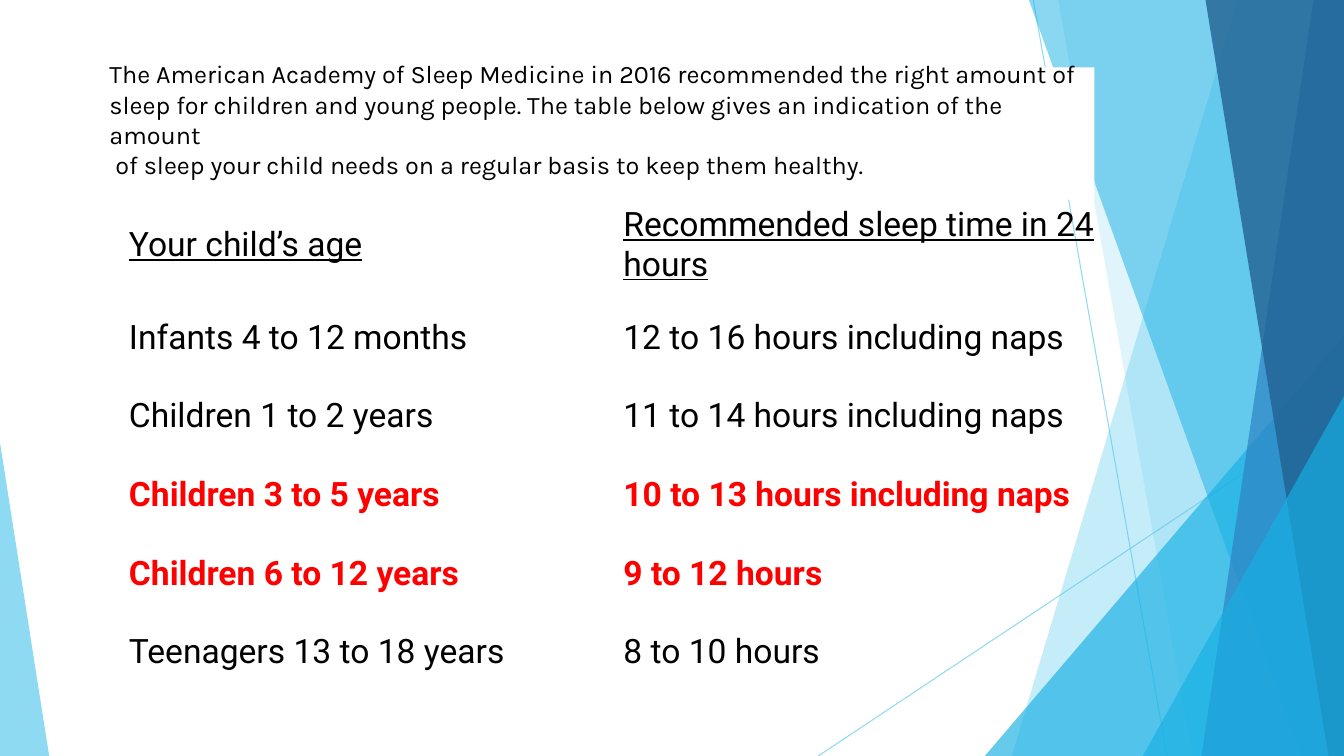
from dataclasses import dataclass

from lxml import etree
from pptx import Presentation
from pptx.dml.color import RGBColor
from pptx.enum.shapes import MSO_CONNECTOR, MSO_SHAPE
from pptx.enum.text import MSO_ANCHOR, MSO_AUTO_SIZE, PP_ALIGN
from pptx.oxml.ns import qn
from pptx.util import Cm, Pt

STRAIGHT = MSO_CONNECTOR.STRAIGHT
TRIANGLE = MSO_SHAPE.ISOSCELES_TRIANGLE
RECTANGLE = MSO_SHAPE.RECTANGLE
MIDDLE = MSO_ANCHOR.MIDDLE
LEFT = PP_ALIGN.LEFT
FIXED = MSO_AUTO_SIZE.NONE
BLANK_LAYOUT = 6
PLAIN_TABLE_STYLE = "{2D5ABB26-0587-4C30-8999-92F81FD0307C}"


@dataclass(frozen=True)
class Theme:
    sky: str = "5FCBEF"
    cyan: str = "17B0E4"
    blue: str = "2E83C3"
    navy: str = "226292"
    paper: str = "FFFFFF"
    ink: str = "000000"
    alert: str = "FF0000"
    intro_font: str = "Karla"
    table_font: str = "Roboto"
    intro_size: int = 18
    table_size: int = 24
    hairline: float = 0.75


@dataclass(frozen=True)
class Box:
    left: float
    top: float
    width: float
    height: float


THEME = Theme()
SLIDE = Box(0, 0, 33.87, 19.05)
INTRO = Box(2.51, 1.7, 25.07, 3.33)
SLEEP_TABLE = Box(3, 4.83, 24.92, 12.6)
HEADER_HEIGHT = 2.69

INTRO_LINES = [
    "The American Academy of Sleep Medicine in 2016 recommended the right amount of",
    "sleep for children and young people. The table below gives an indication of the amount",
    " of sleep your child needs on a regular basis to keep them healthy.",
]
SLEEP_ROWS = [
    ("Your child’s age", "Recommended sleep time in 24 hours"),
    ("Infants 4 to 12 months", "12 to 16 hours including naps"),
    ("Children 1 to 2 years", "11 to 14 hours including naps"),
    ("Children 3 to 5 years", "10 to 13 hours including naps"),
    ("Children 6 to 12 years", "9 to 12 hours"),
    ("Teenagers 13 to 18 years", "8 to 10 hours"),
]
HIGHLIGHTED_ROWS = (3, 4)


def set_opacity(shape, percent):
    for color in shape._element.spPr.iter(qn("a:srgbClr")):
        etree.SubElement(color, qn("a:alpha")).set("val", str(percent * 1000))


def paint(shape, color, opacity=100):
    shape.shadow.inherit = False
    shape.fill.solid()
    shape.fill.fore_color.rgb = RGBColor.from_string(color)
    shape.line.fill.background()
    if opacity < 100:
        set_opacity(shape, opacity)


def add_span(para, text, font, size, color):
    span = para.add_run()
    span.text = text
    span.font.name = font
    span.font.size = Pt(size)
    span.font.color.rgb = RGBColor.from_string(color)
    return span


def add_ray(page, box, x1, y1, x2, y2):
    ray = page.shapes.add_connector(
        STRAIGHT, Cm(box.left + x1), Cm(box.top + y1),
        Cm(box.left + x2), Cm(box.top + y2))
    ray.line.width = Pt(THEME.hairline)
    ray.line.color.rgb = RGBColor.from_string(THEME.sky)
    set_opacity(ray, 70)
    etree.SubElement(ray._element.spPr, qn("a:effectLst"))


def add_pane(page, box, top_x, bottom_x, color, opacity):
    right, bottom = Cm(box.left + box.width), Cm(box.top + box.height)
    outline = page.shapes.build_freeform(Cm(box.left + top_x), Cm(box.top))
    outline.add_line_segments(
        [(right, Cm(box.top)), (right, bottom), (Cm(box.left + bottom_x), bottom)])
    paint(outline.convert_to_shape(), color, opacity)


def add_wedge(page, box, left, top, width, apex, color, opacity):
    wedge = page.shapes.add_shape(
        TRIANGLE, Cm(box.left + left), Cm(box.top + top),
        Cm(width), Cm(box.height - top))
    wedge.adjustments[0] = apex
    paint(wedge, color, opacity)


def add_backdrop(page, box):
    add_ray(page, box, 26.04, 0, 29.41, box.height)
    add_ray(page, box, box.width, 10.24, 20.62, box.height)
    add_pane(page, box, 31.19, 25.5, THEME.sky, 36)
    add_pane(page, box, 26.67, 30.05, THEME.sky, 20)
    add_wedge(page, box, 24.82, 8.46, box.width - 24.82, 1, THEME.cyan, 66)
    add_pane(page, box, 25.93, 32.79, THEME.cyan, 50)
    add_pane(page, box, 33.1, 30.28, THEME.blue, 70)
    add_pane(page, box, 30.38, 33.48, THEME.navy, 80)
    add_wedge(page, box, 28.8, 9.98, box.width - 28.8, 1, THEME.cyan, 66)
    add_wedge(page, box, 0, 11.15, 1.24, 0, THEME.sky, 70)


def add_sleep_table(page, box):
    table = page.shapes.add_table(
        len(SLEEP_ROWS), 2, Cm(box.left), Cm(box.top),
        Cm(box.width), Cm(box.height)).table
    table.first_row = False
    table.horz_banding = False
    table._tbl.tblPr.find(qn("a:tableStyleId")).text = PLAIN_TABLE_STYLE
    row_height = (box.height - HEADER_HEIGHT) / (len(SLEEP_ROWS) - 1)
    for row, texts in enumerate(SLEEP_ROWS):
        table.rows[row].height = Cm(row_height if row else HEADER_HEIGHT)
        highlighted = row in HIGHLIGHTED_ROWS
        for column, text in enumerate(texts):
            cell = table.cell(row, column)
            cell.fill.background()
            cell.vertical_anchor = MIDDLE
            cell.margin_left = cell.margin_right = Cm(0.25)
            cell.margin_top = cell.margin_bottom = Cm(0.25)
            span = add_span(
                cell.text_frame.paragraphs[0], text, THEME.table_font,
                THEME.table_size, THEME.alert if highlighted else THEME.ink)
            span.font.bold = highlighted
            span.font.underline = row == 0


def add_intro(page, box):
    panel = page.shapes.add_shape(
        RECTANGLE, Cm(box.left), Cm(box.top), Cm(box.width), Cm(box.height))
    paint(panel, THEME.paper)
    frame = panel.text_frame
    frame.word_wrap = True
    frame.auto_size = FIXED
    frame.vertical_anchor = MIDDLE
    frame.margin_bottom = Cm(0.85)
    for index, text in enumerate(INTRO_LINES):
        para = frame.add_paragraph() if index else frame.paragraphs[0]
        para.alignment = LEFT
        add_span(para, text, THEME.intro_font, THEME.intro_size, THEME.ink)


def main():
    deck = Presentation()
    deck.slide_width = Cm(SLIDE.width)
    deck.slide_height = Cm(SLIDE.height)
    page = deck.slides.add_slide(deck.slide_layouts[BLANK_LAYOUT])
    add_backdrop(page, SLIDE)
    add_sleep_table(page, SLEEP_TABLE)
    add_intro(page, INTRO)
    deck.save("out.pptx")


if __name__ == "__main__":
    main()
